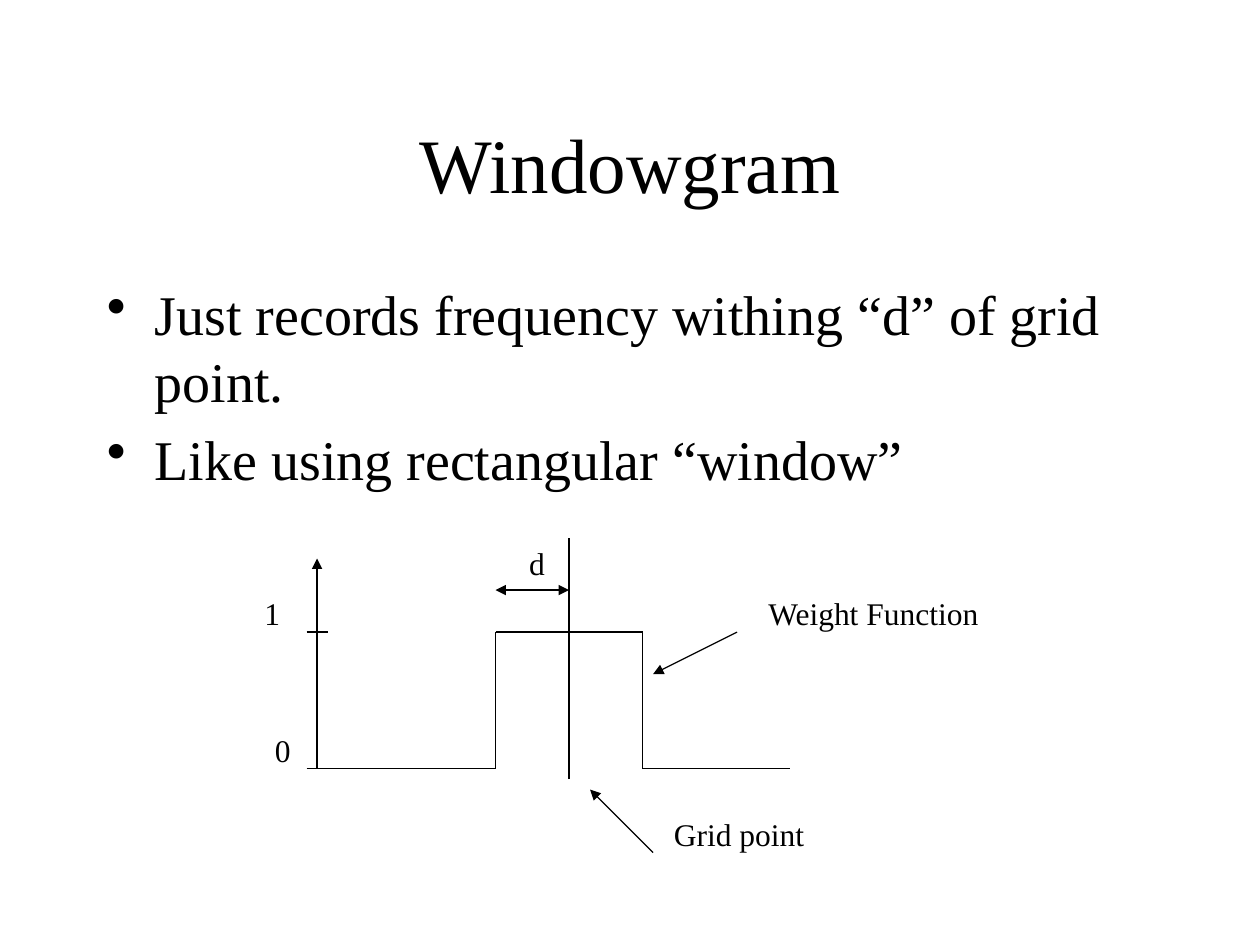
import dataclasses

import lxml.etree
import pptx
import pptx.dml.color
import pptx.enum.shapes
import pptx.enum.text
import pptx.oxml.ns
import pptx.util

# Grid: 120 columns by 90 rows over the slide
CELL = 1 / 12
LINE_OFFSET = 0.2  # the diagram lines sit a fifth of a cell off the grid
FONT = "Times New Roman"
BLACK = "000000"
ALIGN = pptx.enum.text.PP_ALIGN
ANCHOR = pptx.enum.text.MSO_ANCHOR


@dataclasses.dataclass
class TextBlock:
    paragraphs: list[str]
    column: float
    row: float
    columns: float
    rows: float
    size: int = 18
    align: ALIGN = ALIGN.LEFT
    anchor: ANCHOR = ANCHOR.TOP
    bulleted: bool = False


@dataclasses.dataclass
class DiagramLine:
    start: tuple[int, int]
    end: tuple[int, int]
    arrow_ends: tuple[str, ...] = ()


def cells(count: float) -> pptx.util.Length:
    return pptx.util.Inches(count * CELL)


def color(value: str) -> pptx.dml.color.RGBColor:
    return pptx.dml.color.RGBColor.from_string(value)


def set_values(target, values: dict) -> None:
    for name, value in values.items():
        setattr(target, name, value)


def add_bullet(paragraph) -> None:
    properties = paragraph._p.get_or_add_pPr()
    indent = pptx.util.Inches(0.38)
    properties.set("marL", str(indent))
    properties.set("indent", str(-indent))
    paragraph.space_before = pptx.util.Pt(6)
    bullet = lxml.etree.SubElement(properties, pptx.oxml.ns.qn("a:buChar"))
    bullet.set("char", "•")


def draw_text(slide, block: TextBlock) -> None:
    shape = slide.shapes.add_textbox(
        cells(block.column), cells(block.row), cells(block.columns), cells(block.rows)
    )
    frame = shape.text_frame
    set_values(frame, {"word_wrap": True, "vertical_anchor": block.anchor})
    frame.text = "\n".join(block.paragraphs)
    for paragraph in frame.paragraphs:
        paragraph.alignment = block.align
        if block.bulleted:
            add_bullet(paragraph)
        for run in paragraph.runs:
            set_values(run.font, {"name": FONT, "size": pptx.util.Pt(block.size)})
            run.font.color.rgb = color(BLACK)


def draw_line(slide, line: DiagramLine) -> None:
    positions = [cells(value + LINE_OFFSET) for value in line.start + line.end]
    connector = slide.shapes.add_connector(
        pptx.enum.shapes.MSO_CONNECTOR.STRAIGHT, *positions
    )
    connector.line.width = pptx.util.Pt(0.75)
    connector.line.color.rgb = color(BLACK)
    outline = connector.line._get_or_add_ln()
    for end in line.arrow_ends:
        arrow = lxml.etree.SubElement(outline, pptx.oxml.ns.qn(f"a:{end}"))
        arrow.set("type", "triangle")
    lxml.etree.SubElement(
        connector._element.spPr, pptx.oxml.ns.qn("a:effectLst")
    )


# Diagram levels and columns
ZERO, ONE = 73, 60
AXIS, LEFT, CENTER, RIGHT, FAR_RIGHT = 30, 47, 54, 61, 75

TEXTS = [
    TextBlock(["Windowgram"], 9, 8, 102, 15, 44, ALIGN.CENTER, ANCHOR.MIDDLE),
    TextBlock(
        [
            "Just records frequency withing “d” of grid point.",
            "Like using rectangular “window”",
        ],
        9, 26, 102, 25, 32, bulleted=True,
    ),
    TextBlock(["0"], 25, 69, 4.4, 6),
    TextBlock(["1"], 24, 56, 4.4, 6),
    TextBlock(["d"], 49.2, 51.2, 4.4, 6),
    TextBlock(["Grid point"], 63, 77, 19, 6),
    TextBlock(["Weight Function"], 72, 56, 30.4, 6),
]

LINES = [
    # Rectangular weight function
    DiagramLine((33, ZERO), (LEFT, ZERO)),
    DiagramLine((LEFT, ZERO), (LEFT, ONE)),
    DiagramLine((LEFT, ONE), (RIGHT, ONE)),
    DiagramLine((RIGHT, ZERO), (RIGHT, ONE)),
    DiagramLine((RIGHT, ZERO), (FAR_RIGHT, ZERO)),
    # Vertical axis with its ticks
    DiagramLine((AXIS, ZERO), (AXIS, 53), ("tailEnd",)),
    DiagramLine((34, ZERO), (AXIS, ZERO)),
    *[DiagramLine((AXIS - 1, level), (AXIS + 1, level)) for level in (ONE, ZERO)],
    # Grid point, half width and pointers
    DiagramLine((CENTER, 74), (CENTER, 51)),
    DiagramLine((LEFT, 56), (CENTER, 56), ("headEnd", "tailEnd")),
    DiagramLine((62, 81), (56, 75), ("tailEnd",)),
    DiagramLine((70, ONE), (62, 64), ("tailEnd",)),
]


def main() -> None:
    presentation = pptx.Presentation()
    set_values(presentation, {"slide_width": cells(120), "slide_height": cells(90)})
    slide = presentation.slides.add_slide(presentation.slide_layouts[6])
    for block in TEXTS:
        draw_text(slide, block)
    for line in LINES:
        draw_line(slide, line)
    presentation.save("out.pptx")


if __name__ == "__main__":
    main()
